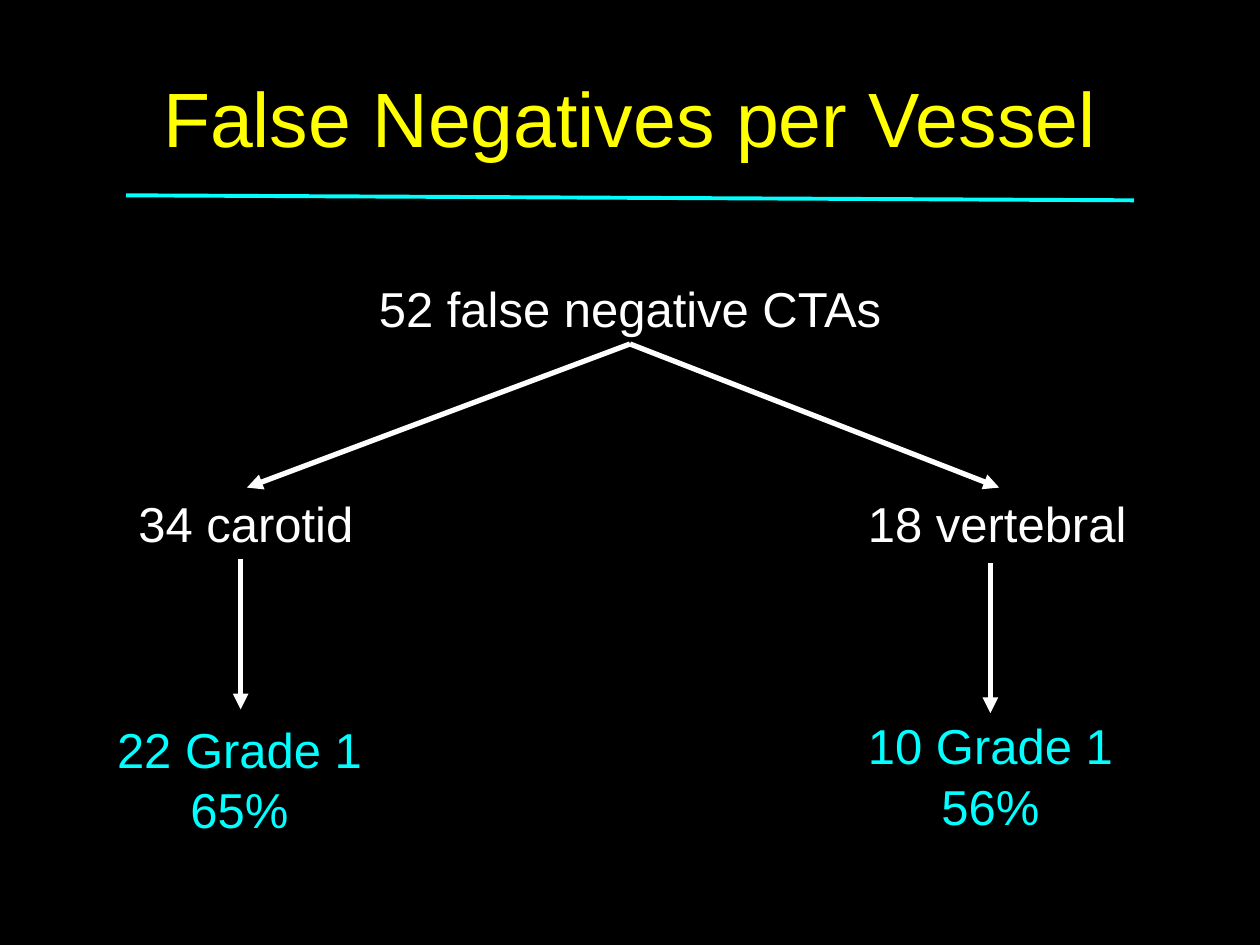
from dataclasses import dataclass

import lxml.etree
import pptx
import pptx.dml.color
import pptx.enum.shapes
import pptx.enum.text
import pptx.oxml.ns
import pptx.util

Inches = pptx.util.Inches
Pt = pptx.util.Pt
RGBColor = pptx.dml.color.RGBColor
Align = pptx.enum.text.PP_ALIGN

BLACK = RGBColor(0x00, 0x00, 0x00)
WHITE = RGBColor(0xFF, 0xFF, 0xFF)
YELLOW = RGBColor(0xFF, 0xFF, 0x00)
CYAN = RGBColor(0x00, 0xFF, 0xFF)
FONT = "Arial"


@dataclass
class Label:
    lines: list[str]
    left: float
    top: float
    width: float
    height: float = 0.57
    color: RGBColor = WHITE
    align: Align = Align.CENTER
    wrap: bool = True


@dataclass
class Line:
    start: tuple[float, float]
    end: tuple[float, float]
    color: RGBColor = WHITE
    width: float = 3
    arrow: bool = True


LABELS = [
    Label(["52 false negative CTAs"], 0, 2.16, 10),
    Label(["34 carotid"], 1, 3.87, 1.93, align=Align.LEFT, wrap=False),
    Label(["18 vertebral"], 6.79, 3.87, 2.28, align=Align.LEFT, wrap=False),
    Label(["22 Grade 1", "65%"], -0.01, 5.66, 3.82, 1.51, CYAN),
    Label(["10 Grade 1", "56%"], 6, 5.63, 3.72, 1.51, CYAN),
]

LINES = [
    Line((1, 1.55), (9, 1.59), CYAN, 2.25, arrow=False),
    Line((5, 2.73), (1.96, 3.87)),
    Line((5, 2.73), (7.93, 3.87)),
    Line((1.91, 4.44), (1.91, 5.63)),
    Line((7.86, 4.47), (7.86, 5.66)),
]


def format_paragraph(paragraph, size: float, color: RGBColor, align: Align) -> None:
    paragraph.alignment = align
    paragraph.font.name = FONT
    paragraph.font.size = Pt(size)
    paragraph.font.color.rgb = color


def add_title(slide, text: str) -> None:
    title = slide.shapes.title
    title.left, title.top = Inches(0.5), Inches(0.3)
    title.width, title.height = Inches(9), Inches(1.25)
    title.text_frame.text = text
    title.text_frame.vertical_anchor = pptx.enum.text.MSO_ANCHOR.MIDDLE
    format_paragraph(title.text_frame.paragraphs[0], 44, YELLOW, Align.CENTER)


def add_label(slide, label: Label) -> None:
    box = slide.shapes.add_textbox(Inches(label.left), Inches(label.top),
                                   Inches(label.width), Inches(label.height))
    frame = box.text_frame
    frame.word_wrap = label.wrap
    frame.text = "\n".join(label.lines)
    for index, paragraph in enumerate(frame.paragraphs):
        format_paragraph(paragraph, 28, label.color, label.align)
        if index:
            paragraph.space_before = Pt(1)


def add_line(slide, line: Line) -> None:
    connector = slide.shapes.add_connector(
        pptx.enum.shapes.MSO_CONNECTOR.STRAIGHT,
        *map(Inches, line.start + line.end))
    connector.line.color.rgb = line.color
    connector.line.width = Pt(line.width)
    qn = pptx.oxml.ns.qn
    if line.arrow:
        lxml.etree.SubElement(connector.line._get_or_add_ln(), qn("a:tailEnd"),
                              type="triangle")
    # An empty effect list removes the theme shadow
    lxml.etree.SubElement(connector._element.spPr, qn("a:effectLst"))


def main() -> None:
    presentation = pptx.Presentation()
    presentation.slide_width = Inches(10)
    presentation.slide_height = Inches(7.5)
    slide = presentation.slides.add_slide(presentation.slide_layouts[5])
    slide.background.fill.solid()
    slide.background.fill.fore_color.rgb = BLACK

    # Title, then the tree of counts and its arrows
    add_title(slide, "False Negatives per Vessel")
    for label in LABELS:
        add_label(slide, label)
    for line in LINES:
        add_line(slide, line)

    presentation.save("out.pptx")


if __name__ == "__main__":
    main()
